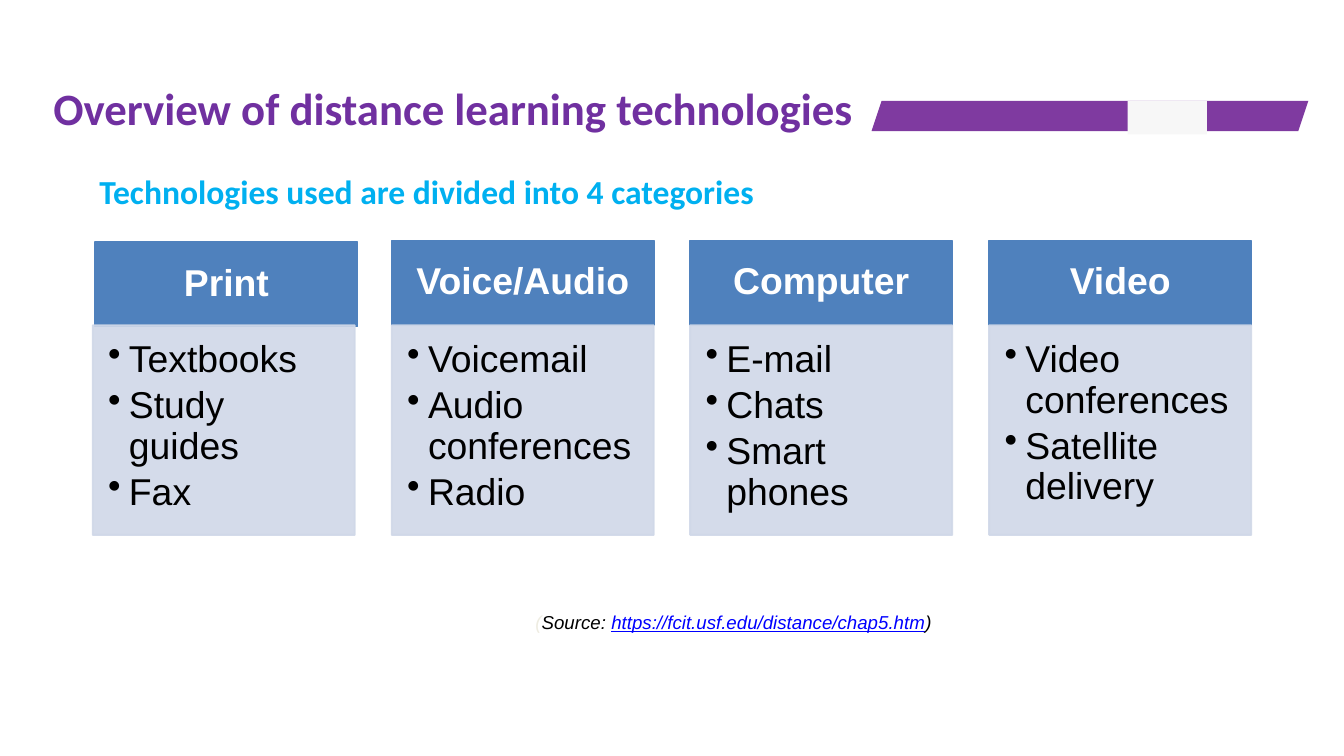
from lxml import etree
from pptx import Presentation
from pptx.dml.color import RGBColor
from pptx.enum.shapes import MSO_SHAPE
from pptx.enum.text import MSO_ANCHOR, PP_ALIGN
from pptx.oxml.ns import qn
from pptx.util import Pt

PX = 9144  # 100 px to the inch
RECTANGLE = MSO_SHAPE.RECTANGLE
CENTER, LEFT = PP_ALIGN.CENTER, PP_ALIGN.LEFT
TOP, MIDDLE = MSO_ANCHOR.TOP, MSO_ANCHOR.MIDDLE

COLORS = {
    "purple": "7F3AA0", "gap": "F7F7F7", "title": "7030A0", "subtitle": "00B0F0",
    "header": "4F81BD", "body": "D0D8E8", "white": "FFFFFF", "black": "000000",
    "link": "0000FF", "faint": "EEECE1",
}
COLUMNS = [
    ("Print", ["Textbooks", "Study guides", "Fax"]),
    ("Voice/Audio", ["Voicemail", "Audio conferences", "Radio"]),
    ("Computer", ["E-mail", "Chats", "Smart phones"]),
    ("Video", ["Video conferences", "Satellite delivery"]),
]
COLUMN_LEFT, COLUMN_SPAN, COLUMN_WIDTH = 138, 1334, 390
HEADER_TOP, HEADER_HEIGHT, BODY_HEIGHT = 358, 126, 312
BULLET_INDENT = 31


def style_font(font, name, size, color, bold=False, italic=False):
    font.name, font.size = name, Pt(size)
    font.bold, font.italic = bold, italic
    font.color.rgb = RGBColor.from_string(COLORS[color])


def add_box(left, top, width, height, color, outlined=True):
    """Add a plain rectangle, with an outline of its own colour if wanted."""
    shape = slide.shapes.add_shape(RECTANGLE, left * PX, top * PX, width * PX, height * PX)
    shape.shadow.inherit = False
    shape.fill.solid()
    shape.fill.fore_color.rgb = RGBColor.from_string(COLORS[color])
    if outlined:
        shape.line.color.rgb = RGBColor.from_string(COLORS[color])
        shape.line.width = Pt(2)
    else:
        shape.line.fill.background()
    return shape


presentation = Presentation()
presentation.slide_width, presentation.slide_height = 2000 * PX, 1125 * PX
slide = presentation.slides.add_slide(presentation.slide_layouts[6])

# Slanted title bar with a light gap
builder = slide.shapes.build_freeform(1312, 150, scale=PX)
builder.add_line_segments([(1947, 150), (1932, 195), (1297, 195)], close=True)
bar = builder.convert_to_shape()
bar.shadow.inherit = False
bar.fill.solid()
bar.fill.fore_color.rgb = RGBColor.from_string(COLORS["purple"])
bar.line.fill.background()
add_box(1678, 150, 118, 50, "gap", outlined=False)

# Title and subtitle
for text, left, top, width, height, size, color, alignment in [
    ("Overview of distance learning technologies", 58, 115, 1233, 146, 48, "title", CENTER),
    ("Technologies used are divided into 4 categories", 138, 249, 1000, 71, 36, "subtitle", LEFT),
]:
    heading = slide.shapes.add_textbox(left * PX, top * PX, width * PX, height * PX)
    heading.text_frame.word_wrap = True
    heading.text_frame.text = text
    paragraph = heading.text_frame.paragraphs[0]
    paragraph.alignment = alignment
    style_font(paragraph.runs[0].font, "Calibri", size, color, bold=True)

# Four category columns
for index, (category, items) in enumerate(COLUMNS):
    left = COLUMN_LEFT + round(index * COLUMN_SPAN / 3)
    # The first header sits slightly off the grid
    shift_x, shift_y = (4, 2) if index == 0 else (0, 0)
    header = add_box(left + shift_x, HEADER_TOP + shift_y, COLUMN_WIDTH, HEADER_HEIGHT, "header")
    body = add_box(left, HEADER_TOP + HEADER_HEIGHT, COLUMN_WIDTH, BODY_HEIGHT, "body")
    for color_element in body.element.spPr.iter(qn("a:srgbClr")):
        etree.SubElement(color_element, qn("a:alpha"), val="90000")

    for shape, lines, insets, anchor, alignment, space, color in [
        (header, [category], (31, 18, 31, 18), MIDDLE, CENTER, 14, "white"),
        (body, items, (23, 23, 31, 35), TOP, LEFT, 6, "black"),
    ]:
        frame = shape.text_frame
        frame.word_wrap = True
        frame.vertical_anchor = anchor
        (frame.margin_left, frame.margin_top,
         frame.margin_right, frame.margin_bottom) = [inset * PX for inset in insets]
        frame.text = "\n".join(lines)
        for paragraph in frame.paragraphs:
            paragraph.alignment = alignment
            paragraph.line_spacing = 0.9
            paragraph.space_after = Pt(space)
            if shape is body:
                properties = paragraph._p.get_or_add_pPr()
                properties.set("marL", str(BULLET_INDENT * PX))
                properties.set("indent", str(-BULLET_INDENT * PX))
                etree.SubElement(properties, qn("a:buChar"), char="•")
            style_font(paragraph.runs[0].font, "Arial", 40, color, bold=shape is header)

# Source line, indented so that it centres right of the middle
source = slide.shapes.add_textbox(350 * PX, 904 * PX, 1333 * PX, 44 * PX)
source.text_frame.word_wrap = True
paragraph = source.text_frame.paragraphs[0]
paragraph.alignment = CENTER
paragraph._p.get_or_add_pPr().set("marL", str(150 * PX))
for text, color in [
    ("(", "faint"),
    ("Source: ", "black"),
    ("https://fcit.usf.edu/distance/chap5.htm", "link"),
    (")", "black"),
]:
    run = paragraph.add_run()
    run.text = text
    style_font(run.font, "Arial", 20, color, italic=True)
    run.font.underline = color == "link"

presentation.save("out.pptx")
